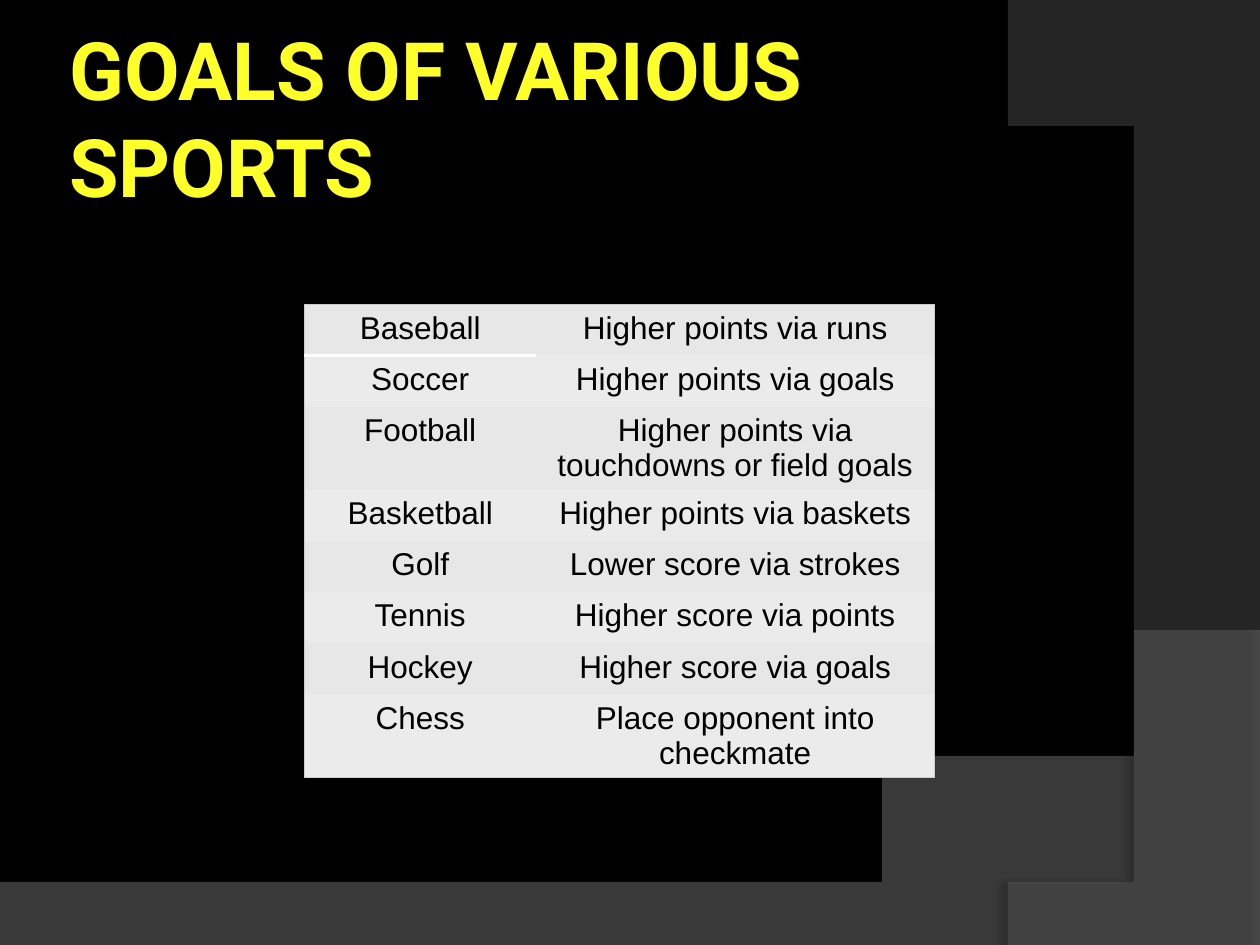
import lxml.etree
import pptx
import pptx.dml.color
import pptx.enum.text
import pptx.oxml.ns
import pptx.util

COLORS = {
    "background": "000000", "title": "FFFF29", "text": "000000",
    "wave": "7F7F7F", "arc": "5E5E5E", "shadow": "000000",
    "odd row": "E7E7E7", "even row": "EBEBEB",
    "frame": "CCCCCC", "rule": "FFFFFF",
}
SPORTS = [
    ("Baseball", "Higher points via runs"),
    ("Soccer", "Higher points via goals"),
    ("Football", "Higher points via touchdowns or field goals"),
    ("Basketball", "Higher points via baskets"),
    ("Golf", "Lower score via strokes"),
    ("Tennis", "Higher score via points"),
    ("Hockey", "Higher score via goals"),
    ("Chess", "Place opponent into checkmate"),
]
# Swooshes in inches: colour, opacity, corners, Bezier curve, shadow opacity, distance, angle
SWOOSHES = [
    ("wave", 45, [(0, 7.5), (10, 7.5)],
     [(10, 5.2), (5.59, 7.29), (3.91, 7.19), (0, 7.05)], 35, 3.5, 270),
    ("arc", 40, [(10, 0.02), (10, 7.5)],
     [(8.21, 7.5), (9.35, 6.19), (10.18, 3), (8, 0)], 45, 4, 180),
]
CURVE_STEPS = 60


def rgb(name):
    return pptx.dml.color.RGBColor.from_string(COLORS[name])


def add_element(parent, tag, **attributes):
    element = lxml.etree.SubElement(parent, pptx.oxml.ns.qn(tag))
    for key, value in attributes.items():
        element.set(key, str(value))
    return element


presentation = pptx.Presentation()
presentation.slide_width = width = pptx.util.Inches(10)
presentation.slide_height = height = pptx.util.Inches(7.5)
slide = presentation.slides.add_slide(presentation.slide_layouts[5])
slide.background.fill.solid()
slide.background.fill.fore_color.rgb = rgb("background")

# Translucent background swooshes
for name, opacity, corners, curve, shadow_opacity, distance, angle in SWOOSHES:
    outline = list(corners)
    for step in range(CURVE_STEPS + 1):
        t = step / CURVE_STEPS
        weights = ((1 - t) ** 3, 3 * t * (1 - t) ** 2, 3 * t * t * (1 - t), t ** 3)
        outline.append(tuple(sum(weight * point[axis] for weight, point in zip(weights, curve))
                             for axis in (0, 1)))
    builder = slide.shapes.build_freeform(*outline[0], scale=pptx.util.Inches(1))
    builder.add_line_segments(outline[1:], close=True)
    shape = builder.convert_to_shape()
    shape.line.fill.background()
    shape.fill.solid()
    shape.fill.fore_color.rgb = rgb(name)
    color = shape.element.spPr.find(".//" + pptx.oxml.ns.qn("a:srgbClr"))
    add_element(color, "a:alpha", val=opacity * 1000)
    shape.shadow.inherit = False
    effects = shape.element.spPr.find(pptx.oxml.ns.qn("a:effectLst"))
    shadow = add_element(effects, "a:outerShdw", blurRad=pptx.util.Pt(4),
                         dist=pptx.util.Pt(distance), dir=angle * 60000,
                         algn="ctr", rotWithShape=0)
    shadow_color = add_element(shadow, "a:srgbClr", val=COLORS["shadow"])
    add_element(shadow_color, "a:alpha", val=shadow_opacity * 1000)

# Title
title = slide.shapes.title
title.left, title.top = int(width * 0.05), int(height * 0.04)
title.width, title.height = int(width * 0.817), int(height / 6)
frame = title.text_frame
frame.word_wrap = True
frame.auto_size = pptx.enum.text.MSO_AUTO_SIZE.NONE
frame.vertical_anchor = pptx.enum.text.MSO_ANCHOR.MIDDLE
frame.margin_left = frame.margin_right = pptx.util.Inches(0.05)
frame.margin_top = frame.margin_bottom = pptx.util.Inches(0.05)
paragraph = frame.paragraphs[0]
paragraph.alignment = pptx.enum.text.PP_ALIGN.LEFT
run = paragraph.add_run()
run.text = "GOALS OF VARIOUS SPORTS"
run.font.name = "Roboto"
run.font.size = pptx.util.Pt(46)
run.font.bold = True
run.font.color.rgb = rgb("title")

# Table of sports and their goals
row_height = pptx.util.Inches(3.25 / len(SPORTS))
table_width = width // 2
table = slide.shapes.add_table(
    len(SPORTS), 2, int(width * 0.242), int(height * 0.322),
    table_width, row_height * len(SPORTS)).table
table.first_row = table.horz_banding = False
for column, share in zip(table.columns, (0.366, 0.634)):
    column.width = int(table_width * share)

last_row = len(SPORTS) - 1
for row_index, texts in enumerate(SPORTS):
    table.rows[row_index].height = row_height
    for column_index, text in enumerate(texts):
        cell = table.cell(row_index, column_index)
        paragraph = cell.text_frame.paragraphs[0]
        paragraph.alignment = pptx.enum.text.PP_ALIGN.CENTER
        run = paragraph.add_run()
        run.text = text
        run.font.name = "Arial"
        run.font.size = pptx.util.Pt(18)
        run.font.color.rgb = rgb("text")

        # Grey outer frame, white rule under the first sport
        edges = {
            "a:lnL": "frame" if column_index == 0 else None,
            "a:lnR": "frame" if column_index == 1 else None,
            "a:lnT": "frame" if row_index == 0 else None,
            "a:lnB": "frame" if row_index == last_row else None,
        }
        if (row_index, column_index) == (0, 0):
            edges["a:lnB"] = "rule"
        if (row_index, column_index) == (1, 0):
            edges["a:lnT"] = "rule"
        properties = cell._tc.get_or_add_tcPr()
        for tag, name in edges.items():
            line = add_element(properties, tag, w=pptx.util.Pt(1.5 if name == "rule" else 0.75))
            if name:
                add_element(add_element(line, "a:solidFill"), "a:srgbClr", val=COLORS[name])
            else:
                add_element(line, "a:noFill")
        cell.fill.solid()
        cell.fill.fore_color.rgb = rgb("even row" if row_index % 2 else "odd row")

presentation.save("out.pptx")
